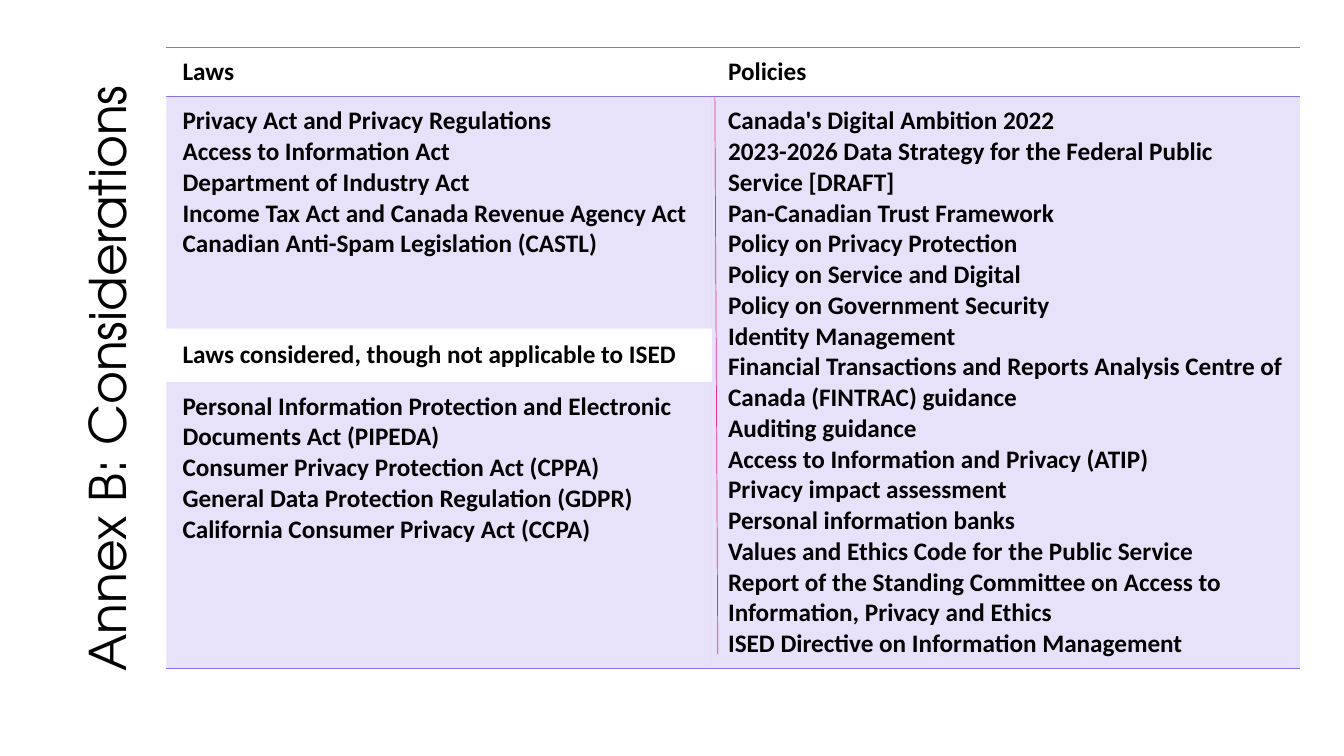
from lxml.etree import SubElement
from pptx import Presentation
from pptx.dml.color import RGBColor
from pptx.enum.shapes import MSO_CONNECTOR
from pptx.enum.text import MSO_ANCHOR, MSO_AUTO_SIZE, PP_ALIGN
from pptx.oxml.ns import qn
from pptx.util import Inches, Pt

BLACK = RGBColor(0x00, 0x00, 0x00)
VIOLET = RGBColor(0x89, 0x71, 0xE1)
PINK = RGBColor(0xE3, 0x2D, 0x91)
NO_STYLE_NO_GRID = "{2D5ABB26-0587-4C30-8999-92F81FD0307C}"

COLUMN_WIDTHS = [40.59, 43.74]
ROW_HEIGHTS = [6.53, 30.67, 7.07, 33.73]

LAWS = [
    "Privacy Act and Privacy Regulations",
    "Access to Information Act",
    "Department of Industry Act",
    "Income Tax Act and Canada Revenue Agency Act",
    "Canadian Anti-Spam Legislation (CASTL)",
]
LAWS_NOT_APPLICABLE = [
    "Personal Information Protection and Electronic Documents Act (PIPEDA)",
    "Consumer Privacy Protection Act (CPPA)",
    "General Data Protection Regulation (GDPR)",
    "California Consumer Privacy Act (CCPA)",
]
POLICIES = [
    "Canada's Digital Ambition 2022",
    "2023-2026 Data Strategy for the Federal Public Service [DRAFT]",
    "Pan-Canadian Trust Framework",
    "Policy on Privacy Protection",
    "Policy on Service and Digital",
    "Policy on Government Security",
    "Identity Management",
    "Financial Transactions and Reports Analysis Centre of Canada (FINTRAC) guidance",
    "Auditing guidance",
    "Access to Information and Privacy (ATIP)",
    "Privacy impact assessment",
    "Personal information banks",
    "Values and Ethics Code for the Public Service",
    "Report of the Standing Committee on Access to Information, Privacy and Ethics",
    "ISED Directive on Information Management",
]


class AnnexSlide:
    """Draws on one slide; all lengths are percentages of the slide's size."""

    title_font = "TeX Gyre Adventor"
    body_font = "Calibri"

    def __init__(self, deck):
        self.deck = deck
        self.slide = deck.slides.add_slide(deck.slide_layouts[5])

    def x(self, percent):
        return round(self.deck.slide_width * percent / 100)

    def y(self, percent):
        return round(self.deck.slide_height * percent / 100)

    def style(self, paragraph, name, size, bold=False):
        font = paragraph.font
        font.name, font.size, font.bold = name, Pt(size), bold
        font.color.rgb = BLACK

    def side_title(self, wording, left, top, width, height):
        title = self.slide.shapes.title
        title.left, title.top = self.x(left), self.y(top)
        title.width, title.height = self.x(width), self.y(height)
        title.rotation = 270
        frame = title.text_frame
        frame.text = wording
        frame.auto_size = MSO_AUTO_SIZE.NONE
        frame.vertical_anchor = MSO_ANCHOR.BOTTOM
        heading = frame.paragraphs[0]
        heading.alignment = PP_ALIGN.LEFT
        heading.line_spacing = 0.9
        self.style(heading, self.title_font, 36)

    def table(self, left, top, widths, heights):
        table = self.slide.shapes.add_table(
            len(heights), len(widths), self.x(left), self.y(top),
            self.x(sum(widths)), self.y(sum(heights))).table
        table._tbl.tblPr.find(qn("a:tableStyleId")).text = NO_STYLE_NO_GRID
        for column, width in zip(table.columns, widths):
            column.width = self.x(width)
        for row, height in zip(table.rows, heights):
            row.height = self.y(height)
        return table

    def cell(self, cell, lines, borders=(), tinted=False, anchor=MSO_ANCHOR.TOP):
        """Fills a cell; borders holds the edges to rule, from "T" and "B"."""
        cell.margin_left = Inches(0.16)
        cell.margin_right = cell.margin_top = cell.margin_bottom = Inches(0.09)
        cell.vertical_anchor = anchor
        cell.text = "\n".join(lines)
        for paragraph in cell.text_frame.paragraphs:
            self.style(paragraph, self.body_font, 18, bold=True)
        properties = cell._tc.get_or_add_tcPr()
        for edge in borders:
            rule = SubElement(properties, qn(f"a:ln{edge}"), w=str(Pt(1)))
            paint = SubElement(rule, qn("a:solidFill"))
            SubElement(paint, qn("a:srgbClr"), val=str(VIOLET))
        if tinted:
            cell.fill.solid()
            cell.fill.fore_color.rgb = VIOLET
            tint = properties.find(qn("a:solidFill")).find(qn("a:srgbClr"))
            SubElement(tint, qn("a:alpha"), val="20000")
        else:
            cell.fill.background()

    def divider(self, x1, y1, x2, y2):
        line = self.slide.shapes.add_connector(
            MSO_CONNECTOR.STRAIGHT, self.x(x1), self.y(y1), self.x(x2), self.y(y2))
        line.line.color.rgb = PINK
        line.line.width = Pt(0.5)
        SubElement(line._element.spPr, qn("a:effectLst"))


def main():
    deck = Presentation()
    deck.slide_width, deck.slide_height = Inches(13.33), Inches(7.5)
    annex = AnnexSlide(deck)
    annex.side_title("Annex B: Considerations", -15.75, 43.33, 47.19, 9.73)

    table = annex.table(12.38, 6.27, COLUMN_WIDTHS, ROW_HEIGHTS)
    table.cell(1, 1).merge(table.cell(3, 1))
    for column, heading in enumerate(["Laws", "Policies"]):
        annex.cell(table.cell(0, column), [heading], borders="TB")
    annex.cell(table.cell(1, 0), LAWS, tinted=True)
    annex.cell(table.cell(1, 1), POLICIES, borders="B", tinted=True)
    annex.cell(table.cell(2, 0), ["Laws considered, though not applicable to ISED"],
               anchor=MSO_ANCHOR.MIDDLE)
    annex.cell(table.cell(3, 0), LAWS_NOT_APPLICABLE, borders="B", tinted=True)

    annex.divider(53.19, 12.8, 53.41, 86.53)
    deck.save("out.pptx")


if __name__ == "__main__":
    main()
